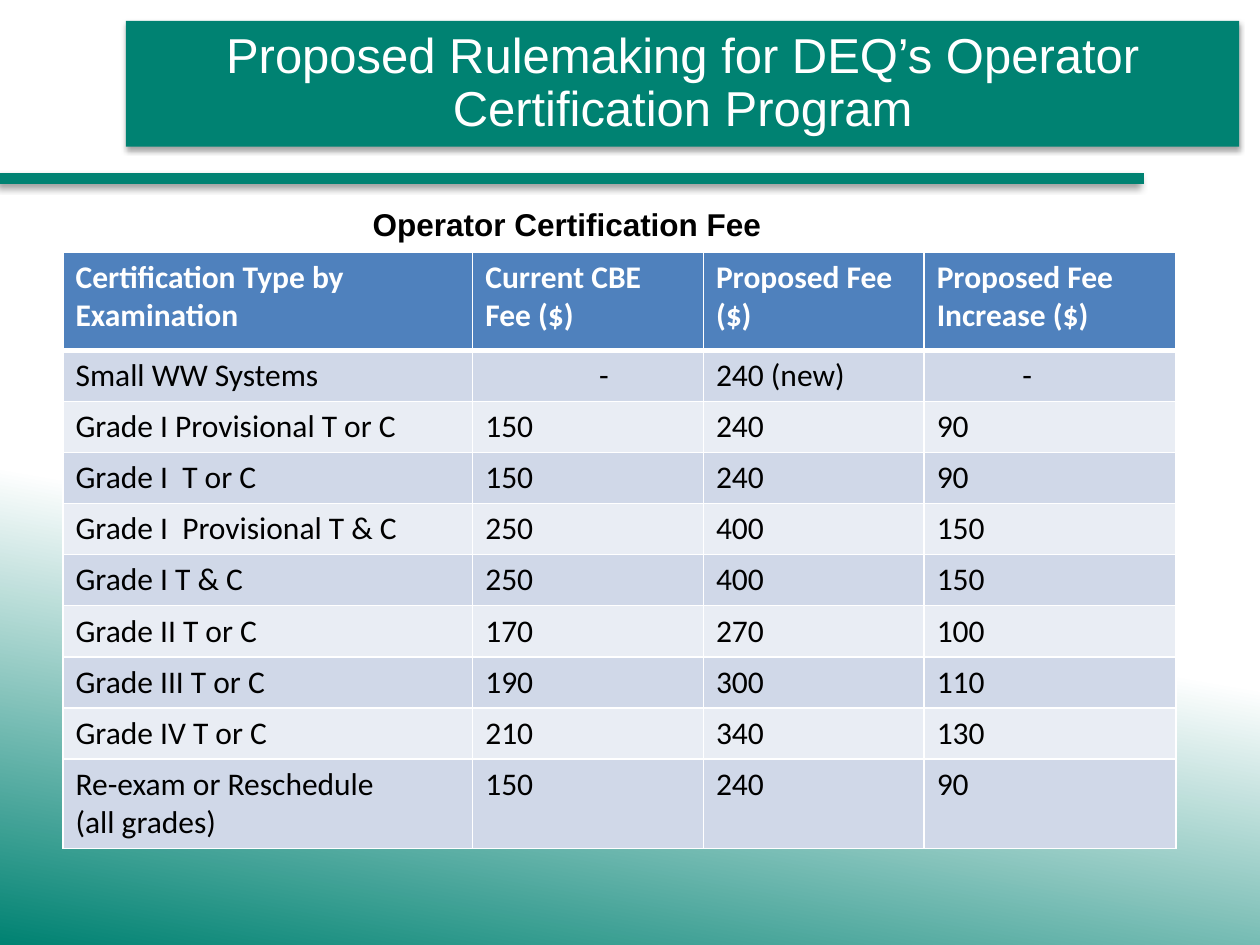
import pptx
import pptx.dml.color
import pptx.enum.shapes
import pptx.enum.text
import pptx.oxml
import pptx.oxml.ns
import pptx.util

Cm, Pt = pptx.util.Cm, pptx.util.Pt
RGB = pptx.dml.color.RGBColor.from_string
ALIGN = pptx.enum.text.PP_ALIGN
ANCHOR = pptx.enum.text.MSO_ANCHOR
NS = pptx.oxml.ns.nsdecls("a")


class Theme:
    green, white, black = "008272", "FFFFFF", "000000"
    header, band_dark, band_light = "4F81BD", "D0D8E8", "E9EDF4"
    heading_font, table_font = "Arial", "Calibri"
    banner_size, body_size = Pt(28), Pt(18)


def style(tf, font, size, color, bold=False, align=None):
    for p in tf.paragraphs:
        p.alignment = align
        for r in p.runs:
            r.font.name, r.font.size, r.font.bold = font, size, bold
            r.font.color.rgb = RGB(color)


def add_shadow(sp, alpha, blur, dist, angle):
    sp._element.spPr.append(pptx.oxml.parse_xml(
        f'<a:effectLst {NS}><a:outerShdw blurRad="{Pt(blur)}" dist="{Pt(dist)}" '
        f'dir="{angle * 60000}" algn="tl" rotWithShape="0"><a:srgbClr val="{Theme.black}">'
        f'<a:alpha val="{alpha * 1000}"/></a:srgbClr></a:outerShdw></a:effectLst>'))


prs = pptx.Presentation()
prs.slide_width, prs.slide_height = Cm(25.4), Cm(19.05)
s = prs.slides.add_slide(prs.slide_layouts[5])

# Background fading to green at the bottom left
fill = s.background.fill
fill.gradient()
fill.gradient_angle = 260
for stop, position, color in zip(fill.gradient_stops, (0.59, 1), (Theme.white, Theme.green)):
    stop.position = position
    stop.color.rgb = RGB(color)

# Banner
banner = s.shapes.add_shape(pptx.enum.shapes.MSO_SHAPE.RECTANGLE,
                            Cm(2.54), Cm(0.42), Cm(22.44), Cm(2.54))
banner.fill.solid()
banner.fill.fore_color.rgb = RGB(Theme.green)
banner.line.fill.background()
add_shadow(banner, 35, 3.1, 1.8, 90)
tf = banner.text_frame
tf.word_wrap = True
tf.vertical_anchor = ANCHOR.MIDDLE
tf.margin_left = tf.margin_right = tf.margin_top = tf.margin_bottom = Cm(0.53)
tf.text = "Proposed Rulemaking for DEQ’s Operator Certification Program"
tf.paragraphs[0].line_spacing = 0.9
style(tf, Theme.heading_font, Theme.banner_size, Theme.white, align=ALIGN.CENTER)

# Rule under the banner
rule = s.shapes.add_connector(pptx.enum.shapes.MSO_CONNECTOR.STRAIGHT,
                              Cm(0), Cm(3.6), Cm(23.06), Cm(3.6))
rule.line.color.rgb = RGB(Theme.green)
rule.line.width = Pt(6)
add_shadow(rule, 40, 4, 3, 135)

# Title above the table
title = s.shapes.title
title.left, title.top, title.width, title.height = Cm(1.27), Cm(4.01), Cm(20.32), Cm(1.27)
tf = title.text_frame
tf.text = "Operator Certification Fee"
tf.word_wrap = True
tf.auto_size = pptx.enum.text.MSO_AUTO_SIZE.NONE
tf.vertical_anchor = ANCHOR.TOP
style(tf, Theme.heading_font, Theme.body_size, Theme.black, bold=True, align=ALIGN.CENTER)

# Fee table
rows = [
    ("Certification Type by Examination", "Current CBE Fee ($)",
     "Proposed Fee ($)", "Proposed Fee Increase ($)"),
    ("Small WW Systems", "-", "240 (new)", "-"),
    ("Grade I Provisional T or C", "150", "240", "90"),
    ("Grade I  T or C", "150", "240", "90"),
    ("Grade I  Provisional T & C", "250", "400", "150"),
    ("Grade I T & C", "250", "400", "150"),
    ("Grade II T or C", "170", "270", "100"),
    ("Grade III T or C", "190", "300", "110"),
    ("Grade IV T or C", "210", "340", "130"),
    ("Re-exam or Reschedule\n(all grades)", "150", "240", "90"),
]
col_widths = [Cm(8.26), Cm(4.65), Cm(4.45), Cm(5.08)]
row_heights = [Cm(1.98)] + [Cm(1.03)] * 8 + [Cm(1.8)]
dash_margins = {1: Cm(2.55), 3: Cm(1.98)}

table = s.shapes.add_table(len(rows), len(col_widths), Cm(1.27), Cm(5.08),
                           sum(col_widths), sum(row_heights)).table
for column, width in zip(table.columns, col_widths):
    column.width = width
for i, (row, height) in enumerate(zip(rows, row_heights)):
    table.rows[i].height = height
    is_header = i == 0
    band = Theme.header if is_header else (Theme.band_light, Theme.band_dark)[i % 2]
    for j, text in enumerate(row):
        cell = table.cell(i, j)
        cell.text_frame.text = text
        if text == "-":
            cell.margin_left = dash_margins[j]
        style(cell.text_frame, Theme.table_font, Theme.body_size,
              Theme.white if is_header else Theme.black, bold=is_header)
        # White borders, thick between header and body
        tc_pr = cell._tc.get_or_add_tcPr()
        for side in "LRTB":
            thick = (i, side) in ((0, "B"), (1, "T"))
            tc_pr.append(pptx.oxml.parse_xml(
                f'<a:ln{side} {NS} w="{Pt(3 if thick else 1)}"><a:solidFill>'
                f'<a:srgbClr val="{Theme.white}"/></a:solidFill></a:ln{side}>'))
        cell.fill.solid()
        cell.fill.fore_color.rgb = RGB(band)

prs.save("out.pptx")
